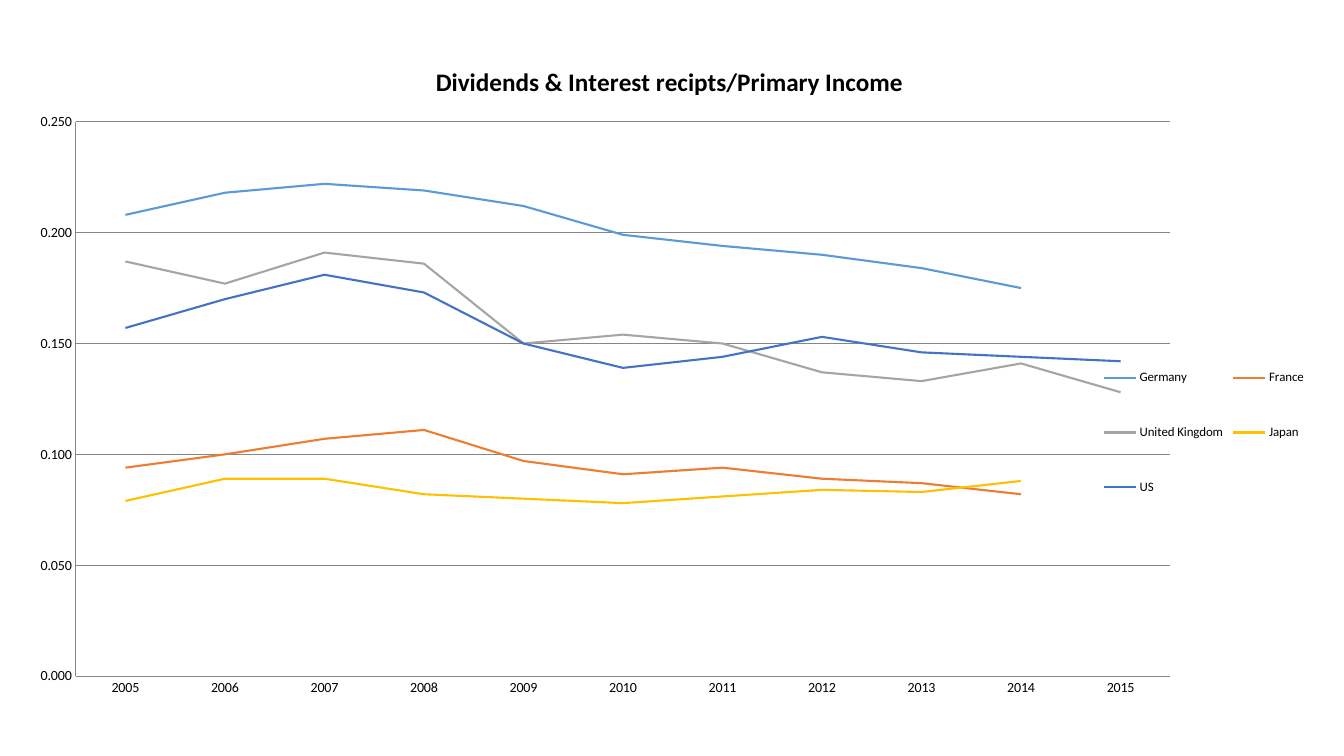
from dataclasses import dataclass
from typing import Optional

from pptx import Presentation
from pptx.chart.chart import Chart
from pptx.chart.data import CategoryChartData
from pptx.dml.color import RGBColor
from pptx.enum.chart import XL_CHART_TYPE, XL_LEGEND_POSITION, XL_TICK_MARK
from pptx.oxml import parse_xml
from pptx.oxml.ns import nsdecls, qn
from pptx.util import Pt


@dataclass(frozen=True)
class Theme:
    font: str = "Calibri"
    text: RGBColor = RGBColor(0x00, 0x00, 0x00)
    rule: RGBColor = RGBColor(0x86, 0x86, 0x86)
    title_size: float = 18
    label_size: float = 10
    legend_size: float = 9.2
    rule_width: float = 0.75
    series_width: float = 1.5


@dataclass(frozen=True)
class Box:
    """Position on the slide, in points; no size means automatic size."""
    left: float
    top: float
    width: Optional[float] = None
    height: Optional[float] = None


@dataclass(frozen=True)
class Country:
    name: str
    color: str
    ratios: tuple[Optional[float], ...]


THEME = Theme()
CHART_BOX = Box(10, 25, 941, 482)
TITLE_BOX = Box(308, 42.5)
PLOT_BOX = Box(54, 87, 782, 396)
LEGEND_BOX = Box(784, 236, 152, 146)

TITLE = "Dividends & Interest recipts/Primary Income"
YEARS = [str(year) for year in range(2005, 2016)]
COUNTRIES = [
    Country("Germany", "5B9BD5", (0.208, 0.218, 0.222, 0.219, 0.212, 0.199,
                                  0.194, 0.19, 0.184, 0.175, None)),
    Country("France", "ED7D31", (0.094, 0.1, 0.107, 0.111, 0.097, 0.091,
                                 0.094, 0.089, 0.087, 0.082, None)),
    Country("United Kingdom", "A5A5A5", (0.187, 0.177, 0.191, 0.186, 0.15, 0.154,
                                         0.15, 0.137, 0.133, 0.141, 0.128)),
    Country("Japan", "FFC000", (0.079, 0.089, 0.089, 0.082, 0.08, 0.078,
                                0.081, 0.084, 0.083, 0.088, None)),
    Country("US", "4472C4", (0.157, 0.17, 0.181, 0.173, 0.15, 0.139,
                             0.144, 0.153, 0.146, 0.144, 0.142)),
]


def style_font(font, size: float, bold: bool = False) -> None:
    font.name = THEME.font
    font.size = Pt(size)
    font.bold = bold
    font.color.rgb = THEME.text


def style_line(line, color: RGBColor, width: float) -> None:
    line.color.rgb = color
    line.width = Pt(width)


def place(chart: Chart, tag: str, box: Box) -> None:
    """Give a chart part a manual layout, as fractions of the chart frame."""
    part = chart.element.find(f".//{qn(tag)}")
    for layout in part.findall(qn("c:layout")):
        part.remove(layout)
    fractions = {"x": (box.left - CHART_BOX.left) / CHART_BOX.width,
                 "y": (box.top - CHART_BOX.top) / CHART_BOX.height}
    if box.width and box.height:
        fractions |= {"w": box.width / CHART_BOX.width,
                      "h": box.height / CHART_BOX.height}
    target = '<c:layoutTarget val="inner"/>' if tag == "c:plotArea" else ""
    modes = '<c:xMode val="edge"/><c:yMode val="edge"/>'
    values = "".join(f'<c:{key} val="{val:.4f}"/>' for key, val in fractions.items())
    layout = parse_xml(f'<c:layout {nsdecls("c")}><c:manualLayout>'
                       f"{target}{modes}{values}</c:manualLayout></c:layout>")
    overlay = part.find(qn("c:overlay"))
    if overlay is None:
        part.insert(0, layout)
    else:
        overlay.addprevious(layout)


def add_ratio_chart(slide) -> Chart:
    data = CategoryChartData(number_format="0.000")
    data.categories = YEARS
    for country in COUNTRIES:
        data.add_series(country.name, country.ratios)
    frame = slide.shapes.add_chart(
        XL_CHART_TYPE.LINE, Pt(CHART_BOX.left), Pt(CHART_BOX.top),
        Pt(CHART_BOX.width), Pt(CHART_BOX.height), data)
    return frame.chart


def style_series(chart: Chart) -> None:
    plot = chart.plots[0]
    plot.vary_by_categories = False
    for series, country in zip(plot.series, COUNTRIES):
        series.smooth = False
        style_line(series.format.line, RGBColor.from_string(country.color),
                   THEME.series_width)


def style_axes(chart: Chart) -> None:
    for axis in (chart.category_axis, chart.value_axis):
        axis.major_tick_mark = axis.minor_tick_mark = XL_TICK_MARK.NONE
        style_font(axis.tick_labels.font, THEME.label_size)
        style_line(axis.format.line, THEME.rule, THEME.rule_width)
    axis = chart.value_axis
    axis.minimum_scale, axis.maximum_scale, axis.major_unit = 0, 0.25, 0.05
    axis.tick_labels.number_format = "0.000"
    axis.tick_labels.number_format_is_linked = False
    axis.has_major_gridlines = True
    style_line(axis.major_gridlines.format.line, THEME.rule, THEME.rule_width)


def add_title(chart: Chart) -> None:
    chart.has_title = True
    title = chart.chart_title
    title.include_in_layout = False
    p = title.text_frame.paragraphs[0]
    p.text = TITLE
    style_font(p.font, THEME.title_size, bold=True)
    place(chart, "c:title", TITLE_BOX)


def add_legend(chart: Chart) -> None:
    chart.has_legend = True
    legend = chart.legend
    legend.position = XL_LEGEND_POSITION.RIGHT
    legend.include_in_layout = False
    style_font(legend.font, THEME.legend_size)
    place(chart, "c:legend", LEGEND_BOX)


def main() -> None:
    prs = Presentation()
    prs.slide_width, prs.slide_height = Pt(960), Pt(540)
    slide = prs.slides.add_slide(prs.slide_layouts[6])
    chart = add_ratio_chart(slide)
    style_font(chart.font, THEME.label_size)
    style_series(chart)
    style_axes(chart)
    add_title(chart)
    add_legend(chart)
    place(chart, "c:plotArea", PLOT_BOX)
    prs.save("out.pptx")


if __name__ == "__main__":
    main()
